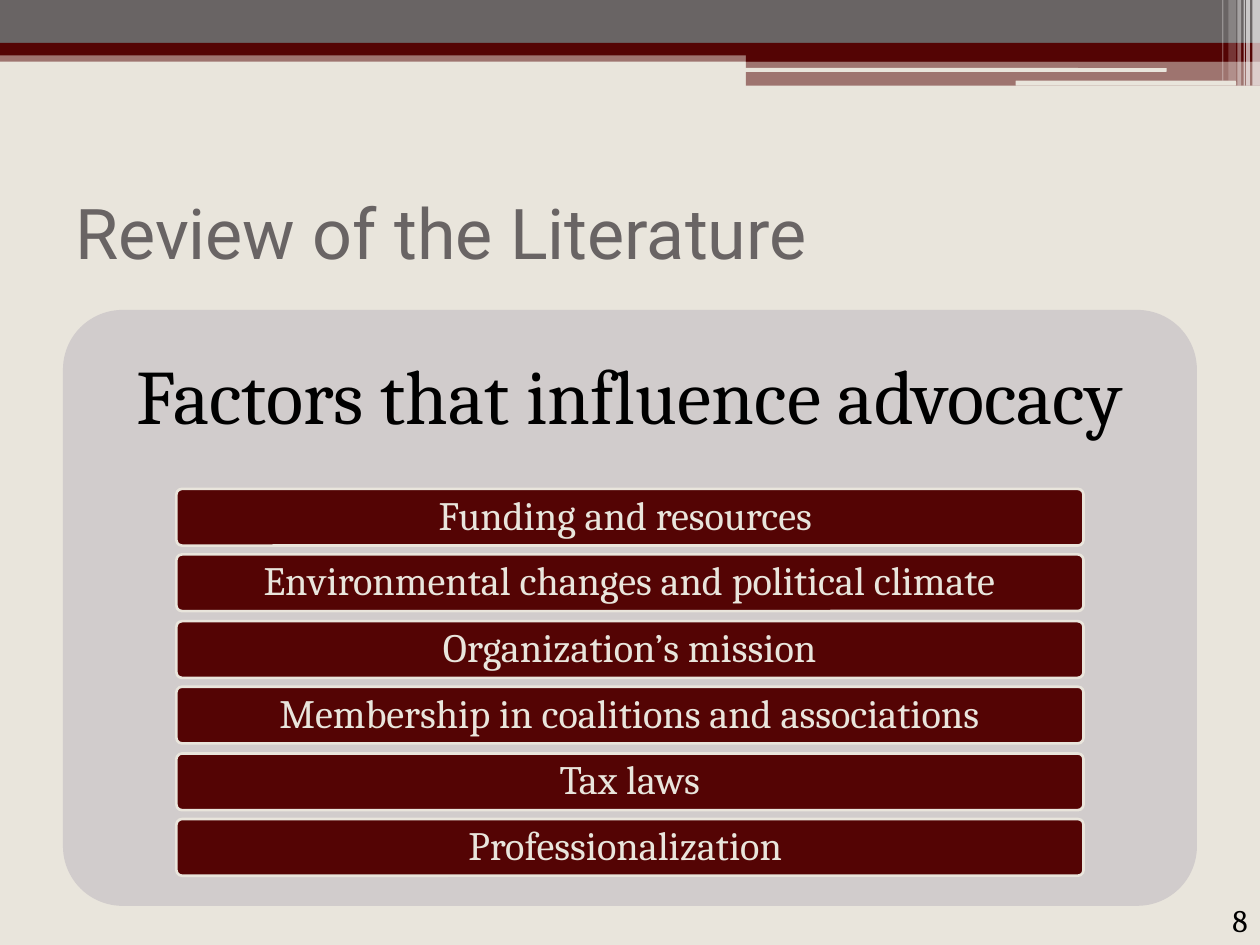
from lxml import etree
from pptx import Presentation
from pptx import util as u
from pptx.dml.color import RGBColor
from pptx.enum import shapes, text
from pptx.oxml.ns import qn

PX = 9144  # EMU in one px, 100 px to the inch

CREAM = RGBColor(0xE9, 0xE5, 0xDC)
GREY = RGBColor(0x69, 0x64, 0x64)
MAROON = RGBColor(0x54, 0x04, 0x04)
PANEL = RGBColor(0xD1, 0xCC, 0xCC)
WHITE = RGBColor(0xFF, 0xFF, 0xFF)
BLACK = RGBColor(0, 0, 0)

RECT = shapes.MSO_SHAPE.RECTANGLE
ROUND = shapes.MSO_SHAPE.ROUNDED_RECTANGLE

FACTORS = [
    "Funding and resources ",
    "Environmental changes and political climate",
    "Organization’s mission",
    "Membership in coalitions and associations",
    "Tax laws",
    "Professionalization ",
]


def emu(box):
    return [u.Emu(length * PX) for length in box]


def add_block(page, box, color, kind=RECT, radius=None, opacity=100, outline=None):
    """Add a filled shape; radius is a share of the shorter side."""
    block = page.shapes.add_shape(kind, *emu(box))
    block.shadow.inherit = False
    block.fill.solid()
    block.fill.fore_color.rgb = color
    if radius is not None:
        block.adjustments[0] = radius
    if opacity < 100:
        fill = block._element.spPr.find(qn("a:solidFill"))
        etree.SubElement(fill[0], qn("a:alpha"), val=str(opacity * 1000))
    if outline is None:
        block.line.fill.background()
    else:
        block.line.color.rgb = outline
        block.line.width = u.Pt(1.5)
    return block


def write(shape, words, size, color, font="Cambria", align=text.PP_ALIGN.LEFT,
          anchor=text.MSO_ANCHOR.MIDDLE, insets=(10, 5), spacing=None):
    """Put one formatted paragraph in a shape; insets are (side, top and bottom)."""
    frame = shape.text_frame
    frame.word_wrap = True
    frame.vertical_anchor = anchor
    frame.margin_left = frame.margin_right = u.Emu(insets[0] * PX)
    frame.margin_top = frame.margin_bottom = u.Emu(insets[1] * PX)
    para = frame.paragraphs[0]
    para.alignment = align
    if spacing is not None:
        para.line_spacing = spacing
    span = para.add_run()
    span.text = words
    span.font.name = font
    span.font.size = u.Pt(size)
    span.font.color.rgb = color


def add_text(page, box, words, **style):
    write(page.shapes.add_textbox(*emu(box)), words, **style)


def add_header(page, left, top, width):
    """Draw the layered bands and the pale stripes at their right end."""
    step = left + 592
    step_width = width - 592
    add_block(page, (left, top + 40, width, 9), MAROON, opacity=50)
    add_block(page, (left, top, width, 34), GREY)
    add_block(page, (left, top + 34, width, 10), MAROON)
    add_block(page, (step, top + 39, step_width, 10), MAROON)
    add_block(page, (step, top + 48, step_width, 20), MAROON, opacity=50)
    add_block(page, (left + 591, top + 54, 335, 3), CREAM, ROUND, radius=0.17)
    add_block(page, (left + 806, top + 64, 175, 4), CREAM, ROUND, radius=0.17)

    stripes = [(994, 6, 68, 65), (989, 3, 68, 65), (987, 1, 68, 60),
               (982, 3, 68, 40), (975, 6, 64, 20), (970, 1, 64, 30)]
    for offset, thickness, height, opacity in stripes:
        add_block(page, (left + offset, top, thickness, height), WHITE, opacity=opacity)


def add_factor_panel(page, left, top, width, height, heading, factors):
    centre = text.PP_ALIGN.CENTER
    add_block(page, (left, top, width, height), PANEL, ROUND, radius=0.1)
    heading_height = height * 3 // 10
    add_text(page, (left, top, width, heading_height + 1), heading, size=44,
             color=BLACK, align=centre, insets=(18, 18), spacing=0.9)
    margin = width // 10
    for index, factor in enumerate(factors):
        bar_top = top + heading_height + 1 + index * 105 // 2
        bar = add_block(page, (left + margin, bar_top, width - 2 * margin, 45),
                        MAROON, ROUND, radius=0.1, outline=CREAM)
        write(bar, factor, size=23, color=CREAM, align=centre,
              insets=(6, 5), spacing=0.9)


def main():
    deck = Presentation()
    deck.slide_width, deck.slide_height = emu((1000, 750))
    page = deck.slides.add_slide(deck.slide_layouts[6])
    page.background.fill.solid()
    page.background.fill.fore_color.rgb = CREAM

    add_header(page, 0, 0, 1000)
    add_text(page, (50, 125, 900, 117), "Review of the Literature",
             size=40, color=GREY, font="Roboto")
    add_factor_panel(page, 50, 246, 900, 473, "Factors that influence advocacy", FACTORS)
    add_text(page, (917, 710, 83, 40), "8", size=18, color=BLACK,
             align=text.PP_ALIGN.RIGHT, anchor=text.MSO_ANCHOR.BOTTOM)
    deck.save("out.pptx")


if __name__ == "__main__":
    main()
